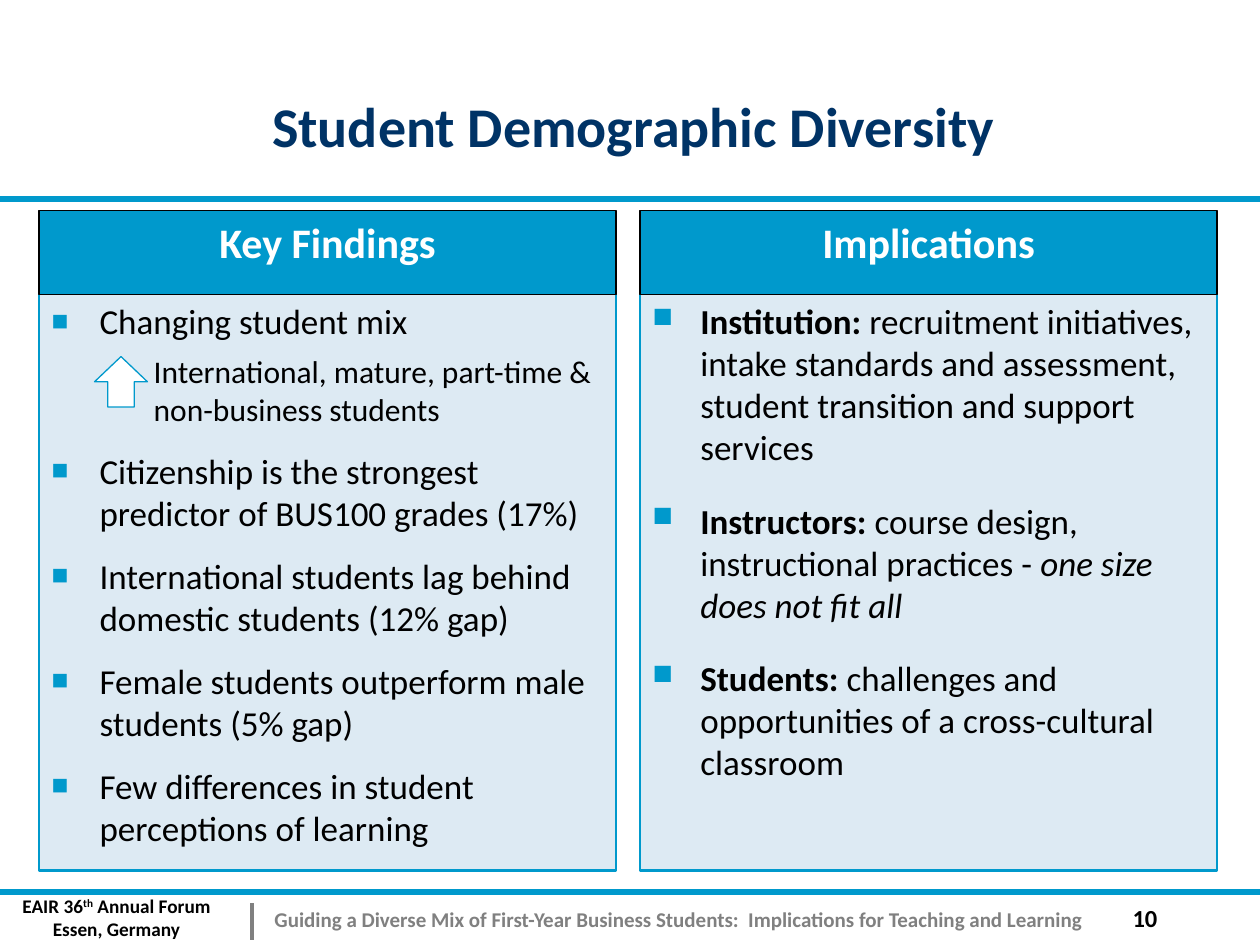
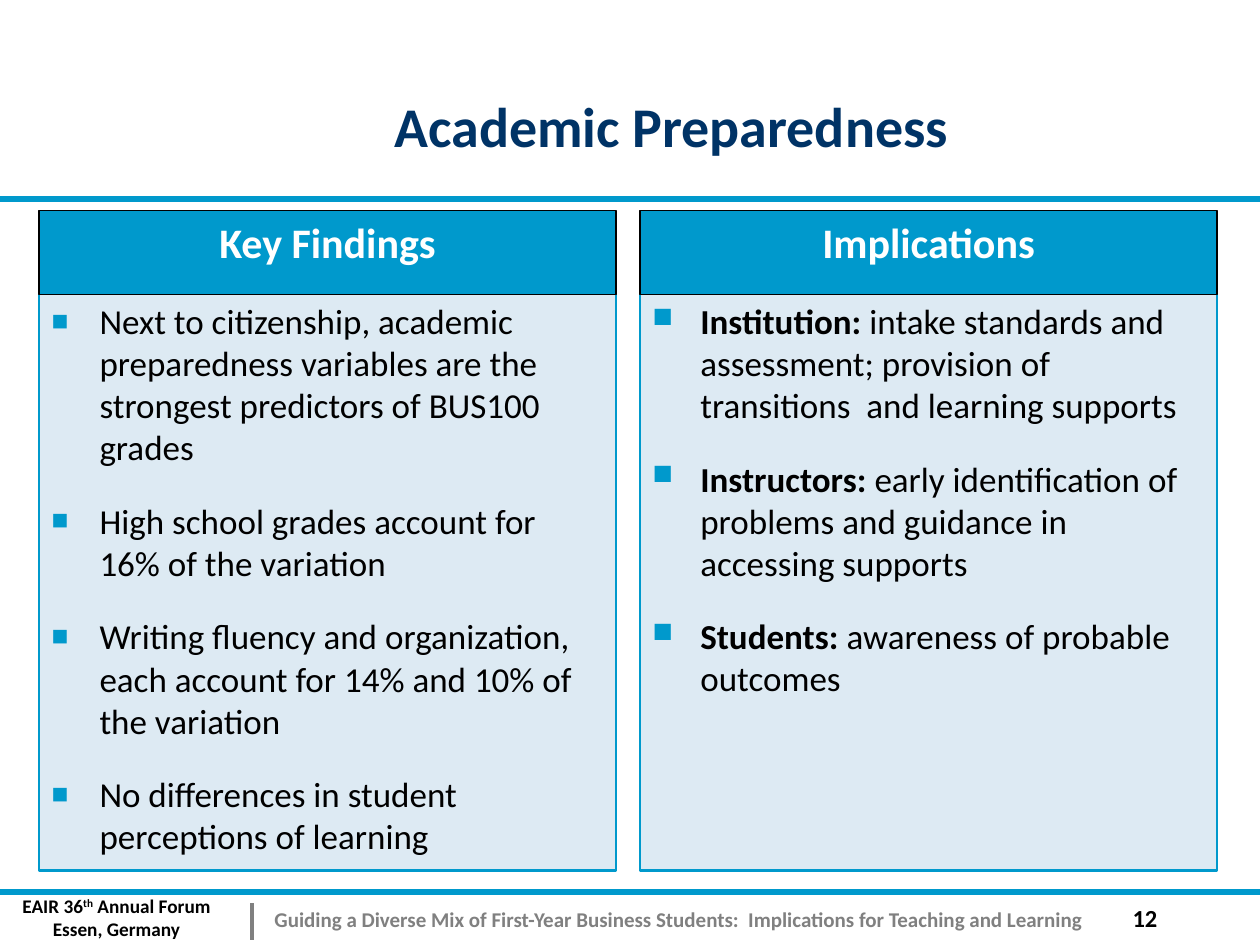
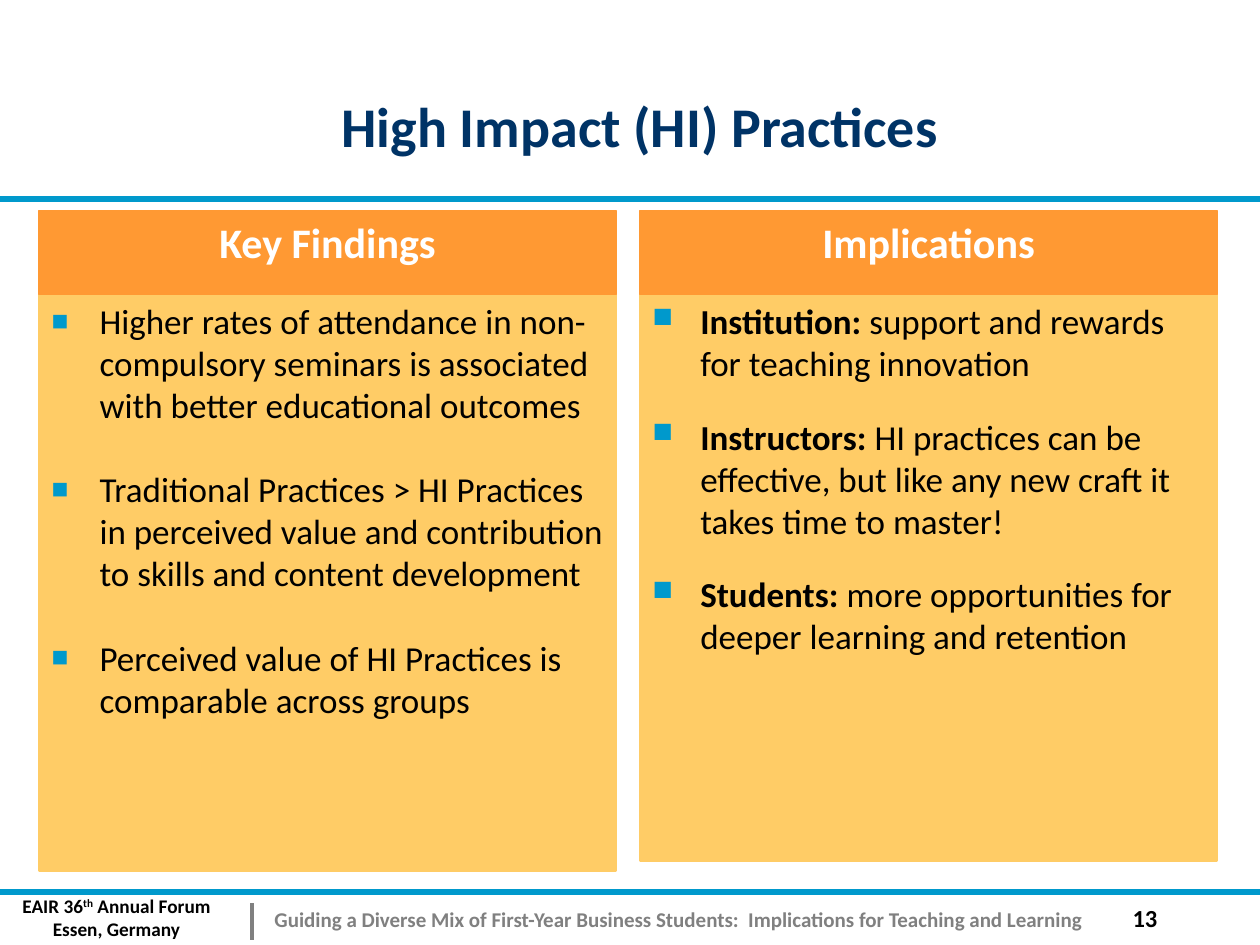
from dataclasses import dataclass

import lxml.etree
import pptx
import pptx.dml.color
import pptx.enum.shapes
import pptx.enum.text
import pptx.oxml.ns
import pptx.util
from pptx.util import Inches

# Shared style
FONT = "Calibri"
BLUE, NAVY, GRAY, BLACK, WHITE = "0099CC", "003366", "808080", "000000", "FFFFFF"
PANEL_TOP, PANEL_WIDTH, PANEL_HEIGHT = 2.33, 4.58, 4.58
HEADER_TOP, HEADER_HEIGHT = 1.67, 0.67
LEFT_COLUMN, RIGHT_COLUMN = 0.31, 5.08
FOOTER_TITLE = ("Guiding a Diverse Mix of First-Year Business Students:  "
                "Implications for Teaching and Learning")
ALIGN = pptx.enum.text.PP_ALIGN
SHAPE = pptx.enum.shapes.MSO_SHAPE


@dataclass(frozen=True)
class Theme:
    header_fill: str
    header_line: str
    panel_fill: str
    panel_line: str


@dataclass(frozen=True)
class Item:
    text: str
    lead: str = ""
    emphasis: str = ""
    nested: bool = False


@dataclass(frozen=True)
class Panel:
    heading: str
    left: float
    items: tuple[Item, ...]
    space_before: int
    height: float = PANEL_HEIGHT


@dataclass(frozen=True)
class Topic:
    title: str
    number: int
    theme: Theme
    findings: Panel
    implications: Panel
    title_left: float = 0.83
    rising: bool = False


BLUE_THEME = Theme(BLUE, BLACK, "DDEAF3", BLUE)
ORANGE_THEME = Theme("FF9933", "FF9933", "FFCC66", "FFCC66")


def findings(*items: Item, space_before: int) -> Panel:
    return Panel("Key Findings", LEFT_COLUMN, items, space_before)


def implications(institution: str, instructors: str, students: str,
                 emphasis: str = "", height: float = PANEL_HEIGHT) -> Panel:
    items = (Item(institution, "Institution: "),
             Item(instructors, "Instructors: ", emphasis),
             Item(students, "Students: "))
    return Panel("Implications", RIGHT_COLUMN, items, 12, height)


TOPICS = (
    Topic(
        "Student Demographic Diversity ", 10, BLUE_THEME,
        findings(
            Item("Changing student mix"),
            Item("International, mature, part-time & non-business students", nested=True),
            Item("Citizenship is the strongest predictor of BUS100 grades (17%)"),
            Item("International students lag behind domestic students (12% gap)"),
            Item("Female students outperform male students (5% gap)"),
            Item("Few differences in student perceptions of learning"),
            space_before=6),
        implications(
            "recruitment initiatives, intake standards and assessment, "
            "student transition and support services",
            "course design, instructional practices - ",
            "challenges and opportunities of a cross-cultural classroom",
            emphasis="one size does not fit all"),
        rising=True),
    Topic(
        "Academic Preparedness", 12, BLUE_THEME,
        findings(
            Item("Next to citizenship, academic preparedness variables are the "
                 "strongest predictors of BUS100 grades"),
            Item("High school grades account for 16% of the variation"),
            Item("Writing fluency and organization, each account for 14% and 10% "
                 "of the variation"),
            Item("No differences in student perceptions of learning"),
            space_before=12),
        implications(
            "intake standards and assessment; provision of transitions  and learning supports",
            "early identification of problems and guidance in accessing supports",
            "awareness of probable outcomes"),
        title_left=1.08),
    Topic(
        "High Impact (HI) Practices", 13, ORANGE_THEME,
        findings(
            Item("Higher rates of attendance in non-compulsory seminars is associated "
                 "with better educational outcomes"),
            Item("Traditional Practices > HI Practices in perceived value and "
                 "contribution to skills and content development"),
            Item("Perceived value of HI Practices is comparable across groups"),
            space_before=18),
        implications(
            "support and rewards for teaching innovation",
            "HI practices can be effective, but like any new craft it takes time to master!",
            "more opportunities for deeper learning and retention",
            height=4.5)),
)


# Helpers
def rgb(value: str) -> pptx.dml.color.RGBColor:
    return pptx.dml.color.RGBColor.from_string(value)


def add_element(parent, tag: str, **attributes: str):
    element = lxml.etree.SubElement(parent, pptx.oxml.ns.qn(tag))
    for name, value in attributes.items():
        element.set(name, value)
    return element


def add_run(paragraph, text: str, *, size: float, color: str = BLACK, bold: bool = False,
            italic: bool = False, superscript: bool = False) -> None:
    run = paragraph.add_run()
    run.text = text
    run.font.name = FONT
    run.font.size = pptx.util.Pt(size)
    run.font.color.rgb = rgb(color)
    run.font.bold = bold
    run.font.italic = italic
    if superscript:
        run.font._element.set("baseline", "30000")


def place(shape, left: float, top: float, width: float, height: float) -> None:
    shape.left, shape.top = Inches(left), Inches(top)
    shape.width, shape.height = Inches(width), Inches(height)


def prepare_text(shape, anchor=pptx.enum.text.MSO_ANCHOR.TOP):
    frame = shape.text_frame
    frame.word_wrap = True
    frame.auto_size = pptx.enum.text.MSO_AUTO_SIZE.NONE
    frame.vertical_anchor = anchor
    return frame


def paint(shape, fill: str, line: str, width: float) -> None:
    shape.fill.solid()
    shape.fill.fore_color.rgb = rgb(fill)
    shape.line.color.rgb = rgb(line)
    shape.line.width = pptx.util.Pt(width)


def add_box(slide, kind, left: float, top: float, width: float, height: float):
    shape = slide.shapes.add_shape(kind, Inches(left), Inches(top),
                                   Inches(width), Inches(height))
    shape.shadow.inherit = False
    return shape


def add_line(slide, start: tuple[float, float], end: tuple[float, float],
             color: str, width: float) -> None:
    line = slide.shapes.add_connector(pptx.enum.shapes.MSO_CONNECTOR.STRAIGHT,
                                      *map(Inches, start + end))
    line.line.color.rgb = rgb(color)
    line.line.width = pptx.util.Pt(width)
    add_element(line._element.spPr, "a:effectLst")


# Slide frame: bands and footer
def add_frame(slide, number: int) -> None:
    for band_top in (1.58, 7.08):
        add_line(slide, (0, band_top), (10, band_top), BLUE, 3.25)
    add_line(slide, (2, 7.17), (2, 7.46), GRAY, 2.75)

    event = slide.shapes.add_textbox(Inches(0.05), Inches(7.05), Inches(1.75), Inches(0.47))
    frame = prepare_text(event)
    forum, city = frame.paragraphs[0], frame.add_paragraph()
    forum.alignment = city.alignment = ALIGN.CENTER
    add_run(forum, "EAIR 36", size=11, bold=True)
    add_run(forum, "th", size=11, bold=True, superscript=True)
    add_run(forum, " Annual Forum", size=11, bold=True)
    add_run(city, "Essen, Germany", size=11, bold=True)

    footer = slide.shapes.add_textbox(Inches(2.08), Inches(7.12), Inches(7.71), Inches(0.34))
    paragraph = prepare_text(footer).paragraphs[0]
    tabs = add_element(paragraph._p.get_or_add_pPr(), "a:tabLst")
    add_element(tabs, "a:tab", pos=str(Inches(6.81)), algn="l")
    add_run(paragraph, FOOTER_TITLE, size=12, color=GRAY, bold=True)
    add_run(paragraph, f"\t{number}", size=14, bold=True)


# Panels
def format_item(paragraph, item: Item, space_before: int) -> None:
    properties = paragraph._p.get_or_add_pPr()
    paragraph.space_before = pptx.util.Pt(space_before)
    paragraph.space_after = pptx.util.Pt(6)
    if item.nested:
        paragraph.level = 1
        properties.set("marL", str(Inches(0.81)))
        properties.set("indent", "0")
        add_element(properties, "a:buNone")
    else:
        properties.set("marL", str(Inches(0.38)))
        properties.set("indent", str(Inches(-0.38)))
        add_element(add_element(properties, "a:buClr"), "a:srgbClr", val=BLUE)
        add_element(properties, "a:buSzPct", val="80000")
        add_element(properties, "a:buChar", char="■")


def fill_panel(slide, shape, panel: Panel, theme: Theme) -> None:
    place(shape, panel.left, PANEL_TOP, PANEL_WIDTH, panel.height)
    paint(shape, theme.panel_fill, theme.panel_line, 1.5)
    frame = prepare_text(shape)
    for index, item in enumerate(panel.items):
        paragraph = frame.add_paragraph() if index else frame.paragraphs[0]
        paragraph.alignment = ALIGN.LEFT
        format_item(paragraph, item, 0 if index == 0 or item.nested else panel.space_before)
        if item.lead:
            add_run(paragraph, item.lead, size=20, bold=True)
        add_run(paragraph, item.text, size=18 if item.nested else 20)
        if item.emphasis:
            add_run(paragraph, item.emphasis, size=20, italic=True)

    header = add_box(slide, SHAPE.FLOWCHART_PROCESS, panel.left, HEADER_TOP,
                     PANEL_WIDTH, HEADER_HEIGHT)
    paint(header, theme.header_fill, theme.header_line, 0.75)
    heading = prepare_text(header).paragraphs[0]
    heading.alignment = ALIGN.CENTER
    add_run(heading, panel.heading, size=24, color=WHITE, bold=True)


def add_topic(presentation, topic: Topic) -> None:
    slide = presentation.slides.add_slide(presentation.slide_layouts[1])
    add_frame(slide, topic.number)

    title = slide.shapes.title
    place(title, topic.title_left, 0.67, 8.5, 0.64)
    paragraph = prepare_text(title, pptx.enum.text.MSO_ANCHOR.BOTTOM).paragraphs[0]
    paragraph.alignment = ALIGN.CENTER
    add_run(paragraph, topic.title, size=32, color=NAVY, bold=True)

    fill_panel(slide, slide.placeholders[1], topic.findings, topic.theme)
    right = topic.implications
    right_box = add_box(slide, SHAPE.RECTANGLE, right.left, PANEL_TOP, PANEL_WIDTH, right.height)
    fill_panel(slide, right_box, right, topic.theme)

    if topic.rising:
        arrow = add_box(slide, SHAPE.DOWN_ARROW, 0.75, 2.83, 0.42, 0.4)
        arrow.rotation = 180
        paint(arrow, WHITE, BLUE, 0.75)


def main() -> None:
    presentation = pptx.Presentation()
    presentation.slide_width, presentation.slide_height = Inches(10), Inches(7.5)
    for topic in TOPICS:
        add_topic(presentation, topic)
    presentation.save("out.pptx")


if __name__ == "__main__":
    main()
